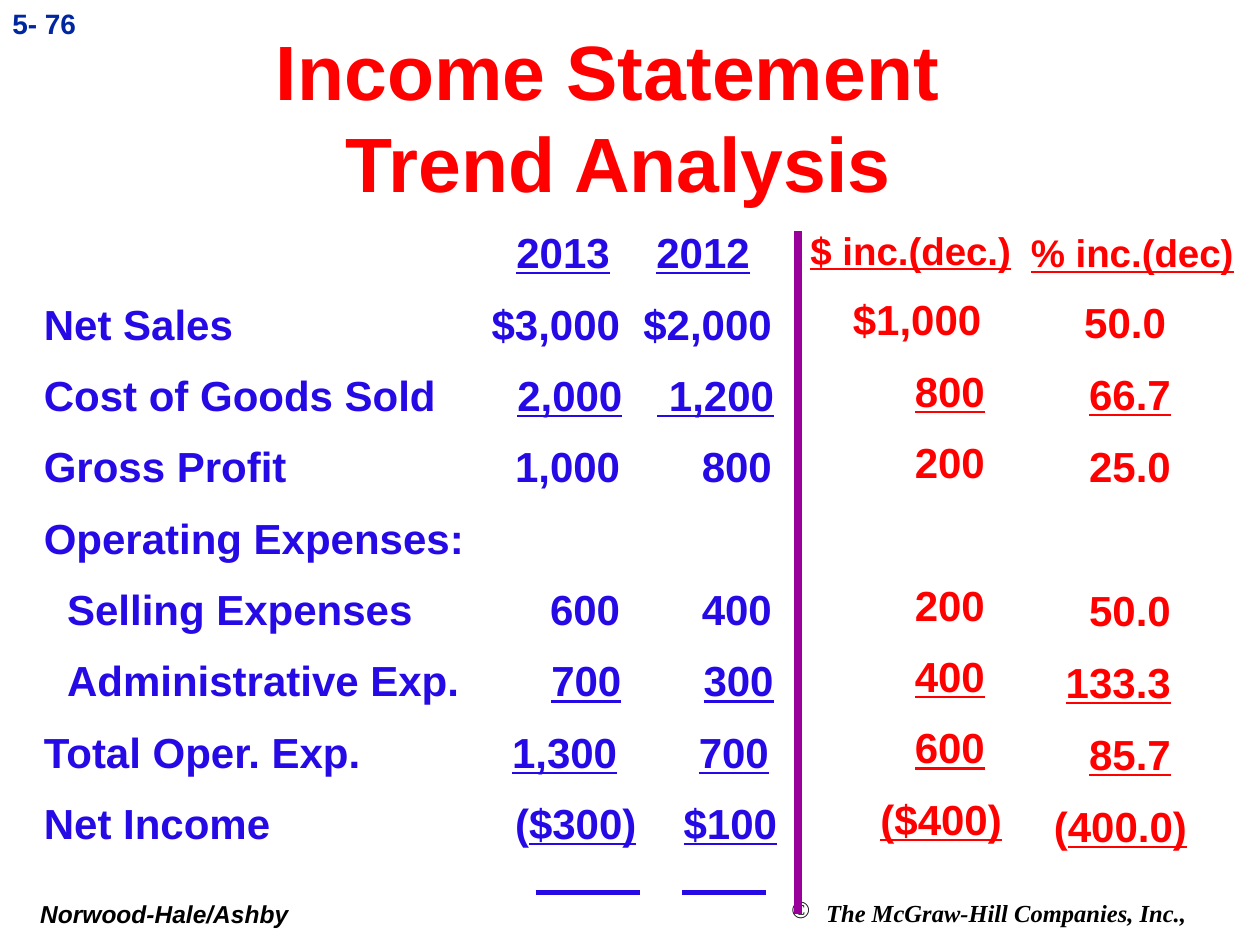
"""Build the income statement trend analysis slide."""
from lxml import etree
from pptx import Presentation
from pptx import util as u
from pptx.dml.color import RGBColor
from pptx.enum import shapes, text
from pptx.oxml import ns

Pt = u.Pt
BLACK = RGBColor(0x00, 0x00, 0x00)
NAVY = RGBColor(0x00, 0x27, 0x9F)
BLUE = RGBColor(0x26, 0x0A, 0xE6)
RED = RGBColor(0xFF, 0x00, 0x00)
PURPLE = RGBColor(0x99, 0x00, 0x99)
INDENT = 13.3
YEARS = (329.3, 416)
DOLLAR = (99.7,)
PERCENT = (80,)

deck = Presentation()
deck.slide_width, deck.slide_height = Pt(720), Pt(540)
slide = deck.slides.add_slide(deck.slide_layouts[6])


def write(lines, box, size, color, first_size=None, font="Arial", italic=False,
          align=text.PP_ALIGN.LEFT, anchor=text.MSO_ANCHOR.TOP, inset=7.2,
          spacing=None, gap=0, row_height=0, bullet=None, hang=0):
    """Write (text, tab stops) lines; bars enclose underlined text, None skips a row."""
    frame = slide.shapes.add_textbox(*map(Pt, box)).text_frame
    frame.word_wrap = True
    frame.vertical_anchor = anchor
    frame.margin_left = Pt(inset)
    before = 0
    for index, line in enumerate(lines):
        if line is None:
            before += row_height + gap
            continue
        content, stops = line
        paragraph = frame.add_paragraph() if index else frame.paragraphs[0]
        properties = paragraph._p.get_or_add_pPr()
        if bullet:
            properties.set("marL", str(Pt(hang)))
            properties.set("indent", str(-Pt(hang)))
            etree.SubElement(properties, ns.qn("a:buChar"), char=bullet)
        if stops:
            tabs = etree.SubElement(properties, ns.qn("a:tabLst"))
            for stop in stops:
                etree.SubElement(tabs, ns.qn("a:tab"), pos=str(Pt(stop)),
                                 algn="l" if stop == INDENT else "r")
        paragraph.alignment = align
        if spacing:
            paragraph.line_spacing = spacing
        if before:
            paragraph.space_before = Pt(before)
        before = gap
        for position, part in enumerate(content.split("|")):
            if part:
                run = paragraph.add_run()
                run.text = part
                run.font.name = font
                run.font.size = Pt(first_size if first_size and index == 0 else size)
                run.font.bold = True
                run.font.italic = italic
                run.font.underline = position % 2 == 1
                run.font.color.rgb = color


write([("Norwood-Hale/Ashby", ())], (0, 510, 180, 24), 14, BLACK,
      italic=True, inset=23)
write([("The McGraw-Hill Companies, Inc.,", ())], (419.5, 509.7, 294, 24), 14, BLACK,
      font="Times New Roman", italic=True, inset=32.6, bullet="©", hang=20)
write([("5- 76", ())], (0, 0, 60, 36), 16, NAVY)
write([("Income Statement ", ()), ("Trend Analysis", ())], (42, 18, 623, 96), 44, RED,
      align=text.PP_ALIGN.CENTER, anchor=text.MSO_ANCHOR.MIDDLE)

statement = [
    ("\t|2013|\t|2012|", (323.4, 403.4)),
    ("Net Sales\t$3,000\t$2,000", YEARS),
    ("Cost of Goods Sold\t|2,000|\t| 1,200|", (330.6, 417.3)),
    ("Gross Profit\t1,000\t800", YEARS),
    ("Operating Expenses:", ()),
    ("\tSelling Expenses\t600\t400", (INDENT, *YEARS)),
    ("\tAdministrative Exp.\t|700|\t|300|", (INDENT, 330, 417)),
    ("Total Oper. Exp.\t|1,300|\t|700|", (327.6, 414.3)),
    ("Net Income\t(|$300)|\t|$100|", (338.6, 419)),
]
write(statement, (18, 126, 678, 385), 24, BLUE, gap=12)

for start, end, color, weight in (
    ((306, 510), (366, 510), BLUE, 3),
    ((390, 510), (438, 510), BLUE, 3),
    ((456, 132), (456, 522), PURPLE, 4.5),
):
    rule = slide.shapes.add_connector(shapes.MSO_CONNECTOR.STRAIGHT,
                                      *map(Pt, start + end))
    rule.line.color.rgb = color
    rule.line.width = Pt(weight)
    etree.SubElement(rule._element.spPr, ns.qn("a:effectLst"))

percent_change = [
    ("|% inc.(dec)|", ()),
    ("\t50.0", (77.2,)),
    ("\t|66.7|", PERCENT),
    ("\t25.0", PERCENT),
    None,
    ("\t50.0", PERCENT),
    ("\t|133.3|", PERCENT),
    ("\t|85.7|", PERCENT),
    ("\t(|400.0)|", (89.2,)),
]
write(percent_change, (582, 126, 138, 381), 24, RED, first_size=22,
      spacing=1.05, gap=10.9, row_height=30)

dollar_change = [
    ("|$ inc.(dec.)|", ()),
    ("\t$1,000", (97.7,)),
    ("\t|800|", DOLLAR),
    ("\t200", DOLLAR),
    None,
    ("\t200", DOLLAR),
    ("\t|400|", DOLLAR),
    ("\t|600|", DOLLAR),
    ("\t|($400)|", (109.4,)),
]
write(dollar_change, (456, 126, 132, 379), 24, RED, first_size=22,
      gap=12, row_height=28.7)

deck.save("out.pptx")
